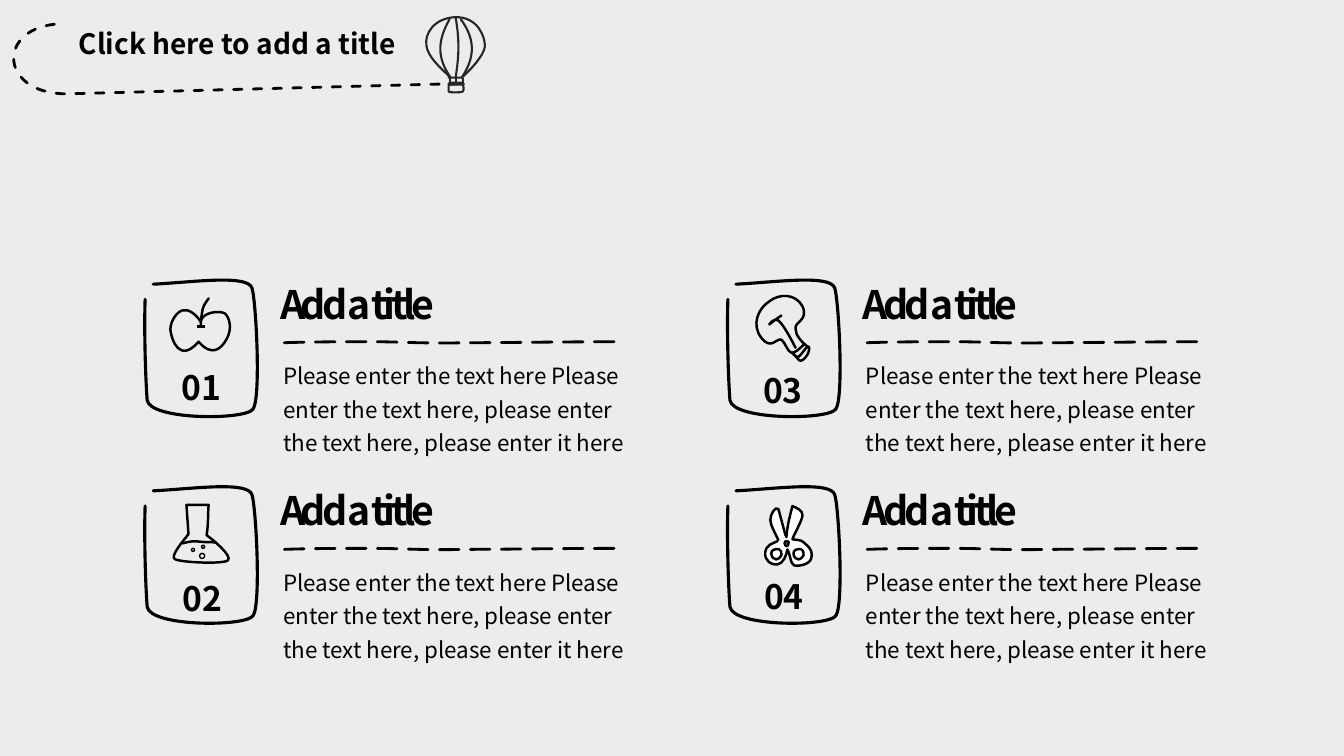
import pptx
import pptx.util
import pptx.dml.color
import pptx.enum.dml
import pptx.enum.shapes
import pptx.enum.text
import pptx.oxml
import pptx.oxml.ns

Inches = pptx.util.Inches
Pt = pptx.util.Pt
RGBColor = pptx.dml.color.RGBColor
DASH = pptx.enum.dml.MSO_LINE
ALIGN = pptx.enum.text.PP_ALIGN
qn = pptx.oxml.ns.qn

BLACK = RGBColor(0x00, 0x00, 0x00)
INK = RGBColor(0x26, 0x26, 0x26)
WHITE = RGBColor(0xFF, 0xFF, 0xFF)
NAVY = RGBColor(0x1F, 0x4E, 0x79)
PAPER = RGBColor(0xEC, 0xEC, 0xEC)
FONT = "Noto Sans CJK SC"
BODY = ("Please enter the text here Please enter the text here, "
        "please enter the text here, please enter it here")


def draw(home, route, weight, color=BLACK, fill=None, dash=None, dx=0, dy=0):
    """Draw a route of M, L, C and Z commands, given in inches."""
    pts, kinds, seen, mode, nums = [], [], [], "", []
    for word in route.split():
        if word in "MLCZ":
            mode = word
            continue
        nums.append(float(word))
        if len(nums) < (6 if mode == "C" else 2):
            continue
        ends = [(Inches(x + dx), Inches(y + dy)) for x, y in zip(nums[::2], nums[1::2])]
        nums = []
        if mode == "C":
            a, (b, c, d) = pts[-1], ends
            for t in (i / 20 for i in range(20)):
                u = 1 - t
                seen.append([u**3 * a[k] + 3 * u * u * t * b[k] + 3 * u * t * t * c[k]
                             + t**3 * d[k] for k in (0, 1)])
        if mode != "M":
            kinds.append(mode)
        pts += ends
        seen.append(ends[-1])
    pen = home.build_freeform(*pts[0])
    pen.add_line_segments(pts[1:], close=mode == "Z")
    shape = pen.convert_to_shape()

    # Turn each run of three points into one curve
    trace = next(shape.element.iter(qn("a:path")))
    legs = iter(trace.findall(qn("a:lnTo")))
    for kind in kinds:
        leg = next(legs)
        if kind == "C":
            leg.tag = qn("a:cubicBezTo")
            for extra in (next(legs), next(legs)):
                leg.append(extra[0])
                trace.remove(extra)

    # Fit the frame to the drawn curve, not to its handles
    x, y = (int(min(p[k] for p in seen)) for k in (0, 1))
    w, h = (int(max(p[k] for p in seen)) - low for k, low in ((0, x), (1, y)))
    for pt in trace.iter(qn("a:pt")):
        pt.set("x", str(int(pt.get("x")) + shape.left - x))
        pt.set("y", str(int(pt.get("y")) + shape.top - y))
    trace.set("w", str(w))
    trace.set("h", str(h))
    shape.left, shape.top, shape.width, shape.height = x, y, w, h

    shape.shadow.inherit = False
    if fill is None:
        shape.fill.background()
    else:
        shape.fill.solid()
        shape.fill.fore_color.rgb = fill
    shape.line.color.rgb = color
    shape.line.width = Pt(weight)
    if dash:
        shape.line.dash_style = dash
    shape.element.spPr.get_or_add_ln().set("cap", "rnd")


def write(text, x, y, w, h, size, bold=True, wrap=True, align=None, gap=None, kern=None):
    box = slide.shapes.add_textbox(Inches(x), Inches(y), Inches(w), Inches(h))
    frame = box.text_frame
    frame.word_wrap = wrap
    frame.auto_size = pptx.enum.text.MSO_AUTO_SIZE.SHAPE_TO_FIT_TEXT
    para = frame.paragraphs[0]
    para.alignment = align
    para.line_spacing = gap
    run = para.add_run()
    run.text = text
    run.font.name = FONT
    run.font.size = Pt(size)
    run.font.bold = bold
    run.font.color.rgb = BLACK
    if kern:
        run.font._element.set("spc", str(kern * 100))


deck = pptx.Presentation()
deck.slide_width = Inches(13.33)
deck.slide_height = Inches(7.5)
slide = deck.slides.add_slide(deck.slide_layouts[6])
slide.background.fill.solid()
slide.background.fill.fore_color.rgb = PAPER

# Header
draw(slide.shapes, "M 0.54 0.24 C -0.05 0.31 0.01 0.95 0.69 0.93 L 4.52 0.83", 2, dash=DASH.DASH)
write("Click here to add a title", 0.62, 0.21, 3.47, 0.44, 20, wrap=False, align=ALIGN.CENTER)

# Four cards in a two by two grid, numbered down each column
NUMBERS = [(1.68, 3.59), (1.69, 5.68), (7.45, 3.62), (7.46, 5.66)]
for i, (x, y) in enumerate(NUMBERS):
    dx, dy = i // 2 * 5.78, i % 2 * 2.05
    draw(slide.shapes,
         "M 1.52 2.82 C 1.92 2.8 2.46 2.72 2.5 2.86 C 2.54 2.99 2.59 3.95 2.51 4.06 "
         "C 2.43 4.17 1.49 4.17 1.46 3.97 C 1.44 3.69 1.43 3.23 1.44 2.97",
         2.25, dx=dx, dy=dy)
    draw(slide.shapes,
         "M 2.82 3.4 C 3.11 3.39 3.4 3.39 3.7 3.39 C 3.99 3.39 4.2 3.41 4.61 3.4 "
         "C 5.01 3.4 5.57 3.39 6.14 3.39",
         2, dash=DASH.LONG_DASH, dx=dx, dy=dy)
    write("Add a title", 2.68 + dx, 2.73 + dy, 2.46, 0.57, 28, kern=-3)
    write(BODY, 2.71 + dx, 3.48 + dy, 3.73, 0.77, 16, bold=False, gap=1.25)
    write(f"{i + 1:02}", x, y, 0.63, 0.5, 24, wrap=False, align=ALIGN.CENTER)

balloon, apple, flask, bulb, shears = [
    slide.shapes.add_group_shape().shapes for _ in range(5)]

# Balloon: canopy and basket, then the straight strokes, then rim and seams
for route in (
        "M 4.46 0.76 C 4.34 0.65 4.24 0.55 4.23 0.45 C 4.21 0.34 4.3 0.18 4.52 0.17 "
        "C 4.74 0.17 4.81 0.36 4.81 0.46 C 4.8 0.56 4.64 0.72 4.58 0.77 L 4.45 0.77 Z",
        "M 4.45 0.84 L 4.59 0.83 C 4.59 0.83 4.61 0.9 4.59 0.91 "
        "C 4.57 0.92 4.46 0.92 4.45 0.91 Z"):
    draw(balloon, route, 1.5, INK)

ropes = [(balloon, x, 0.77, x, 0.83, INK, 1.5) for x in (4.46, 4.52, 4.59)]
stem = (apple, 1.95, 3.24, 2.03, 3.24, BLACK, 1.75)
for home, x1, y1, x2, y2, color, weight in ropes + [stem]:
    bar = home.add_connector(pptx.enum.shapes.MSO_CONNECTOR.STRAIGHT,
                             Inches(x1), Inches(y1), Inches(x2), Inches(y2))
    bar.line.color.rgb = color
    bar.line.width = Pt(weight)
    bar.element.spPr.append(pptx.oxml.parse_xml(
        '<a:effectLst xmlns:a="http://schemas.openxmlformats.org/drawingml/2006/main"/>'))

draw(balloon, "M 4.47 0.82 L 4.58 0.82 C 4.6 0.83 4.61 0.84 4.59 0.84 "
     "L 4.46 0.84 C 4.44 0.84 4.45 0.82 4.47 0.82 Z", 1.5, INK, WHITE)
for route in ("M 4.47 0.77 C 4.34 0.58 4.33 0.42 4.46 0.19",
              "M 4.52 0.76 C 4.55 0.57 4.56 0.41 4.52 0.18",
              "M 4.58 0.77 C 4.69 0.6 4.74 0.42 4.57 0.19"):
    draw(balloon, route, 1.5, INK)

# Apple
draw(apple, "M 1.99 3.19 C 1.94 3.11 1.86 3.06 1.81 3.08 C 1.76 3.09 1.69 3.18 1.69 3.27 "
     "C 1.7 3.37 1.78 3.61 1.97 3.39 C 2.1 3.54 2.19 3.47 2.25 3.36 "
     "C 2.31 3.25 2.27 3.14 2.23 3.11 C 2.19 3.08 2.01 3.09 1.99 3.19 Z", 1.75)
draw(apple, "M 1.99 3.24 C 1.99 3.18 2 3.12 2.01 3.07 C 2.02 3.03 2.04 3 2.07 2.96", 1.75)

# Flask with three bubbles
draw(flask, "M 1.85 5.01 L 2.07 5.01 C 2.06 5.11 2.07 5.18 2.05 5.31 "
     "C 2.12 5.36 2.31 5.52 2.26 5.56 C 2.21 5.6 1.8 5.58 1.74 5.55 "
     "C 1.67 5.53 1.84 5.34 1.87 5.3 Z", 1.75)
draw(flask, "M 1.81 5.39 C 1.85 5.38 1.89 5.37 1.93 5.37 C 1.97 5.37 2 5.38 2.14 5.38", 1.75)
for x, y, size in ((1.9, 5.44, 0.03), (2, 5.41, 0.03), (1.98, 5.49, 0.05)):
    dot = flask.add_shape(pptx.enum.shapes.MSO_SHAPE.OVAL,
                          Inches(x), Inches(y), Inches(size), Inches(size))
    dot.shadow.inherit = False
    dot.fill.background()
    dot.line.color.rgb = BLACK
    dot.line.width = Pt(1)

# Bulb
for route in (
        "M 8.01 3.44 C 7.95 3.39 7.89 3.33 7.89 3.26 C 7.88 3.19 8.02 3.18 7.96 3.04 "
        "C 7.89 2.91 7.73 2.91 7.63 2.99 C 7.52 3.06 7.45 3.22 7.55 3.35 "
        "C 7.65 3.48 7.7 3.35 7.75 3.37 C 7.79 3.4 7.81 3.49 7.85 3.5 "
        "C 7.89 3.5 7.93 3.46 7.97 3.42",
        "M 7.75 3.13 C 7.69 3.17 7.63 3.22 7.63 3.22 C 7.62 3.23 7.68 3.14 7.72 3.18 "
        "C 7.76 3.21 7.83 3.33 7.89 3.45",
        "M 8.01 3.44 C 7.99 3.45 7.94 3.53 7.92 3.54 C 7.89 3.55 7.85 3.49 7.86 3.5 "
        "C 7.87 3.5 7.92 3.58 7.94 3.58 C 7.97 3.58 8.02 3.51 8.02 3.49 "
        "C 8.03 3.46 8.03 3.43 8.01 3.44 Z"):
    draw(bulb, route, 1.75)

# Shears: body, finger holes, pivot, front blade
draw(shears, "M 7.8 5.33 C 7.81 5.2 7.84 5.1 7.86 5.02 C 7.9 5.04 7.96 5.06 7.96 5.11 "
     "C 7.96 5.16 7.87 5.31 7.86 5.35 C 7.9 5.36 7.94 5.35 7.97 5.38 "
     "C 8 5.41 8.06 5.44 8.05 5.52 C 8.05 5.6 7.92 5.62 7.88 5.61 "
     "C 7.84 5.6 7.84 5.5 7.81 5.45 C 7.8 5.51 7.77 5.59 7.71 5.6 "
     "C 7.65 5.61 7.58 5.56 7.59 5.48 C 7.6 5.4 7.67 5.39 7.71 5.37", 1.75, fill=WHITE)
for dx in (0, -0.22):
    draw(shears, "M 7.96 5.46 C 7.97 5.47 7.97 5.48 7.97 5.51 C 7.96 5.53 7.94 5.55 7.92 5.55 "
         "C 7.9 5.55 7.87 5.53 7.87 5.49 C 7.87 5.46 7.9 5.44 7.95 5.45", 1.75, dx=dx)
draw(shears, "M 7.82 5.37 C 7.82 5.38 7.83 5.38 7.82 5.4 C 7.82 5.41 7.81 5.42 7.8 5.42 "
     "C 7.79 5.42 7.78 5.4 7.78 5.39 C 7.78 5.37 7.79 5.36 7.81 5.37", 1.5, fill=NAVY)
draw(shears, "M 7.72 5.36 C 7.69 5.29 7.64 5.21 7.64 5.16 C 7.64 5.1 7.69 5.02 7.72 5.05 "
     "L 7.79 5.31", 1.75, fill=WHITE)

deck.save("out.pptx")
